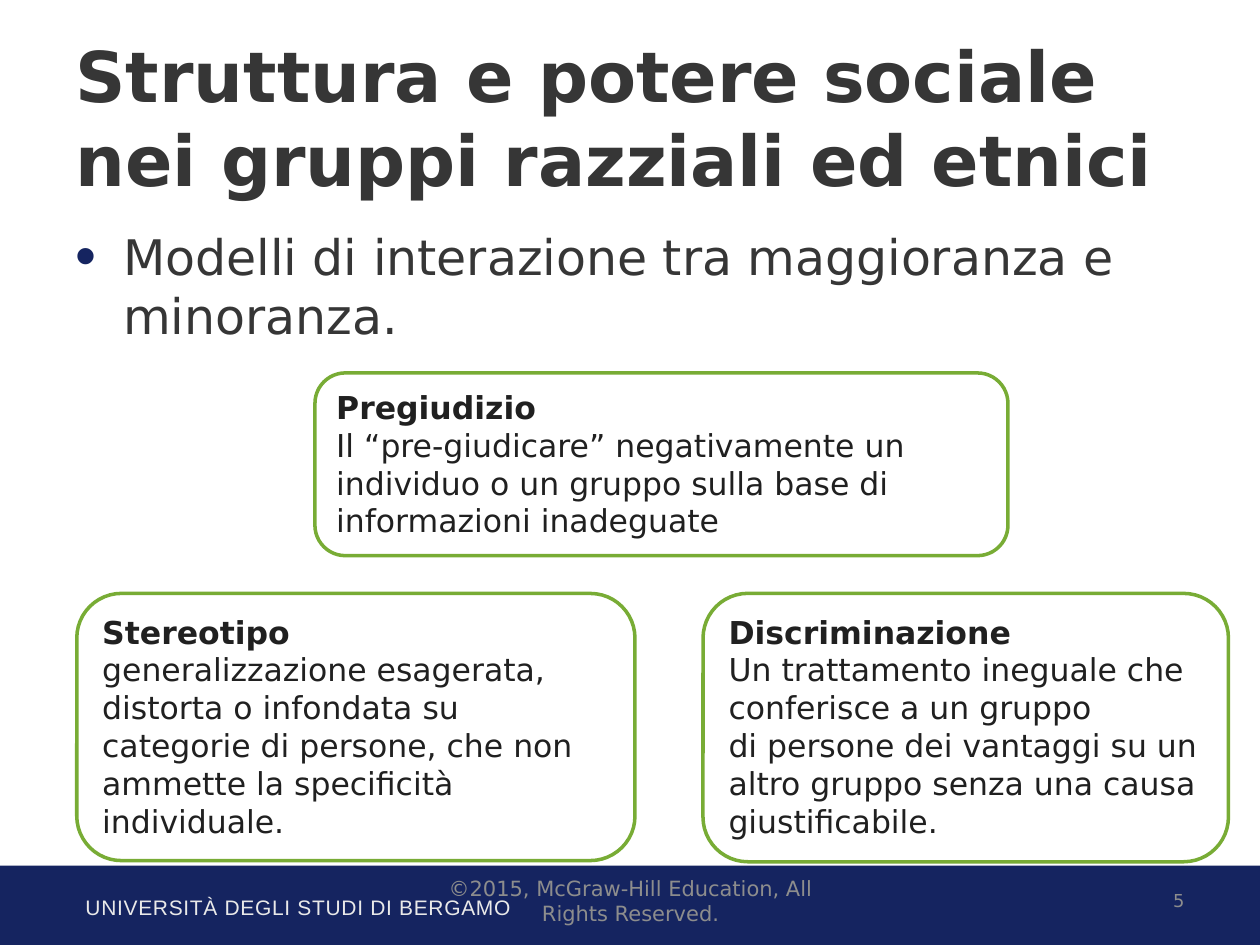
from dataclasses import dataclass

from lxml.etree import SubElement
from pptx import Presentation
from pptx.dml.color import RGBColor
from pptx.enum.shapes import MSO_SHAPE
from pptx.enum.text import MSO_ANCHOR, MSO_AUTO_SIZE, PP_ALIGN
from pptx.oxml.ns import qn
from pptx.util import Inches, Pt


@dataclass(frozen=True)
class Theme:
    font: str = "DejaVu Sans"
    footer_font: str = "Arial"
    navy: str = "152460"
    green: str = "78AC35"
    white: str = "FFFFFF"
    heading: str = "363636"
    card_text: str = "202020"
    university: str = "E9E9E9"
    muted: str = "8D8D8D"
    title_size: float = 40
    body_size: float = 28
    card_size: float = 18
    footer_size: float = 12
    number_size: float = 10.2


@dataclass(frozen=True)
class Box:
    left: float
    top: float
    width: float
    height: float

    def lengths(self) -> tuple:
        return tuple(Inches(value) for value in (self.left, self.top, self.width, self.height))


@dataclass(frozen=True)
class Card:
    box: Box
    term: str
    definition: tuple


THEME = Theme()
LOWER_TOP = 4.71
CARDS = (
    Card(Box(2.5, 2.96, 5.5, 1.45), "Pregiudizio",
         ("Il “pre-giudicare” negativamente un individuo o un gruppo sulla base di "
          "informazioni inadeguate",)),
    Card(Box(0.61, LOWER_TOP, 4.43, 2.12), "Stereotipo",
         ("generalizzazione esagerata, distorta o infondata su categorie di persone, "
          "che non ammette la specificità individuale.",)),
    Card(Box(5.58, LOWER_TOP, 4.17, 2.13), "Discriminazione",
         ("Un trattamento ineguale che conferisce a un gruppo",
          "di persone dei vantaggi su un altro gruppo senza una causa giustificabile.")),
)


def write(paragraph, text: str, *, size: float, color: str, font: str = THEME.font,
          bold: bool = False, align=PP_ALIGN.LEFT, tracking: int = 0) -> None:
    paragraph.alignment = align
    run = paragraph.add_run()
    run.text = text
    run.font.name = font
    run.font.size = Pt(size)
    run.font.bold = bold
    run.font.color.rgb = RGBColor.from_string(color)
    if tracking:
        run.font._element.set("spc", str(tracking))


def add_bullet(paragraph, color: str, percent: int, indent: float) -> None:
    properties = paragraph._p.get_or_add_pPr()
    properties.set("marL", str(Inches(indent)))
    properties.set("indent", str(-Inches(indent)))
    bullet_color = SubElement(properties, qn("a:buClr"))
    SubElement(bullet_color, qn("a:srgbClr"), val=color)
    SubElement(properties, qn("a:buSzPct"), val=str(percent * 1000))
    SubElement(properties, qn("a:buFont"), typeface="Arial")
    SubElement(properties, qn("a:buChar"), char="•")


def add_text_box(slide, box: Box, anchor=MSO_ANCHOR.TOP):
    frame = slide.shapes.add_textbox(*box.lengths()).text_frame
    frame.word_wrap = True
    frame.vertical_anchor = anchor
    return frame.paragraphs[0]


def add_panel(slide, kind: MSO_SHAPE, box: Box, fill: str):
    panel = slide.shapes.add_shape(kind, *box.lengths())
    panel.shadow.inherit = False
    panel.fill.solid()
    panel.fill.fore_color.rgb = RGBColor.from_string(fill)
    panel.line.fill.background()
    return panel


def add_title(slide, text: str, box: Box) -> None:
    title = slide.shapes.title
    title.left, title.top, title.width, title.height = box.lengths()
    frame = title.text_frame
    frame.word_wrap = True
    frame.auto_size = MSO_AUTO_SIZE.NONE
    frame.vertical_anchor = MSO_ANCHOR.MIDDLE
    write(frame.paragraphs[0], text, size=THEME.title_size, color=THEME.heading, bold=True)


def add_card(slide, card: Card) -> None:
    shape = add_panel(slide, MSO_SHAPE.ROUNDED_RECTANGLE, card.box, THEME.white)
    shape.line.color.rgb = RGBColor.from_string(THEME.green)
    shape.line.width = Pt(2)
    frame = shape.text_frame
    frame.word_wrap = True
    frame.auto_size = MSO_AUTO_SIZE.SHAPE_TO_FIT_TEXT
    frame.vertical_anchor = MSO_ANCHOR.TOP
    write(frame.paragraphs[0], card.term, size=THEME.card_size,
          color=THEME.card_text, bold=True)
    for text in card.definition:
        write(frame.add_paragraph(), text, size=THEME.card_size, color=THEME.card_text)


def add_footer_band(slide) -> None:
    add_panel(slide, MSO_SHAPE.RECTANGLE, Box(0, 6.87, 10, 0.63), THEME.navy)
    write(add_text_box(slide, Box(0.58, 7.05, 5.82, 0.3)),
          "UNIVERSITÀ DEGLI STUDI DI BERGAMO", size=THEME.footer_size,
          color=THEME.university, font=THEME.footer_font, tracking=40)


def add_footer_notes(slide) -> None:
    write(add_text_box(slide, Box(7.17, 6.95, 2.33, 0.4), MSO_ANCHOR.MIDDLE), "5",
          size=THEME.number_size, color=THEME.muted, align=PP_ALIGN.RIGHT)
    write(add_text_box(slide, Box(3.42, 6.95, 3.17, 0.4), MSO_ANCHOR.MIDDLE),
          "©2015, McGraw-Hill Education, All Rights Reserved.",
          size=THEME.footer_size, color=THEME.muted, align=PP_ALIGN.CENTER)


def main() -> None:
    presentation = Presentation()
    presentation.slide_width = Inches(10)
    presentation.slide_height = Inches(7.5)
    slide = presentation.slides.add_slide(presentation.slide_layouts[5])
    add_footer_band(slide)
    add_title(slide, "Struttura e potere sociale nei gruppi razziali ed etnici",
              Box(0.5, 0.3, 9, 1.25))
    body = add_text_box(slide, Box(0.5, 1.75, 9, 4.95))
    add_bullet(body, THEME.navy, percent=122, indent=0.38)
    write(body, "Modelli di interazione tra maggioranza e minoranza.",
          size=THEME.body_size, color=THEME.heading)
    for card in CARDS:
        add_card(slide, card)
    add_footer_notes(slide)
    presentation.save("out.pptx")


if __name__ == "__main__":
    main()
